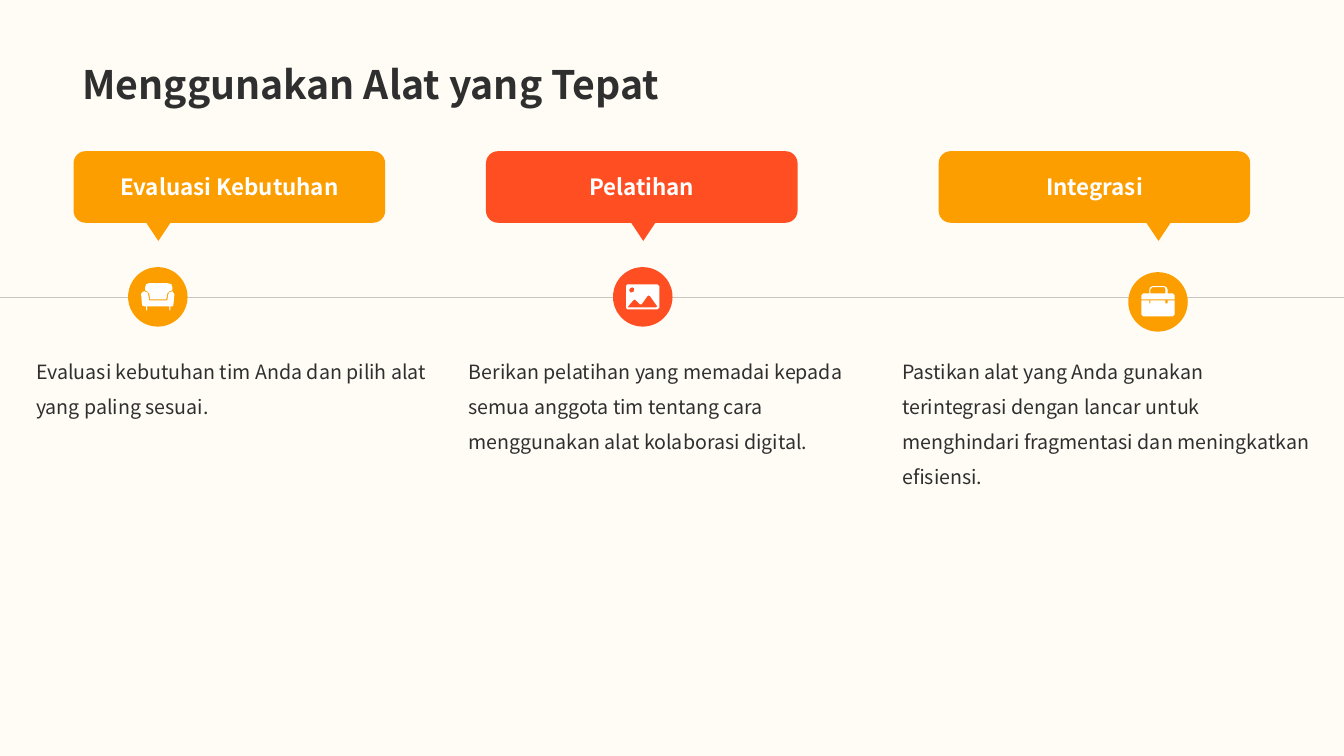
"""Build the slide on choosing the right collaboration tools."""
from lxml import etree
from pptx import Presentation
from pptx.dml.color import RGBColor
from pptx.enum import shapes, text
from pptx.oxml import ns

PX = 9144
THEME = {
    "font": "Noto Sans CJK SC",
    "paper": "FFFCF5", "ink": "2F2F2F", "white": "FFFFFF",
    "amber": "FD9E00", "red": "FF4E22",
    "title": 28, "head": 16, "body": 14,
}
KIND = shapes.MSO_SHAPE

SOFA = [
    [(44, 24), (46, 27), (45, 38), (44, 39), (42, 39), (42, 43), (41, 43), (41, 39),
     (19, 39), (19, 43), (18, 43), (18, 39), (16, 39), (14, 38), (13, 27), (14, 25),
     (16, 24), (19, 25), (20, 27), (21, 33), (39, 33), (40, 27), (41, 25)],
    [(39, 16), (43, 17), (44, 20), (44, 23), (41, 24), (39, 26), (38, 32), (22, 32),
     (21, 26), (19, 24), (17, 23), (17, 20), (18, 17), (21, 16)],
]
PHOTO = [
    [(44, 17), (46, 19), (46, 40), (44, 42), (14, 42), (13, 40), (13, 19), (14, 17)],
    [(37, 29), (35, 28), (34, 29), (29, 36), (28, 37), (27, 37), (23, 33), (22, 32),
     (20, 33), (15, 39), (15, 40), (43, 40), (44, 39)],
    [(19, 20), (21, 21), (21, 24), (19, 25), (17, 25), (16, 23), (17, 21)],
]
BAG = [
    [(21, 28), (21, 31), (22, 31), (22, 28), (37, 28), (37, 31), (39, 31), (39, 28),
     (46, 28), (46, 42), (44, 44), (15, 44), (13, 42), (13, 28)],
    [(36, 14), (38, 15), (39, 17), (39, 21), (44, 21), (46, 23), (46, 27), (13, 27),
     (13, 23), (15, 21), (21, 21), (21, 17), (22, 15), (24, 14)],
    [(36, 15), (24, 15), (22, 17), (22, 21), (37, 21), (37, 17)],
]
STEPS = [
    ("Evaluasi Kebutuhan", "amber", 73, 127, 265, 26, 412, SOFA,
     "Evaluasi kebutuhan tim Anda dan pilih alat yang paling sesuai."),
    ("Pelatihan", "red", 482, 608, 265, 455, 412, PHOTO,
     "Berikan pelatihan yang memadai kepada semua anggota tim tentang cara "
     "menggunakan alat kolaborasi digital."),
    ("Integrasi", "amber", 931, 1119, 270, 885, 426, BAG,
     "Pastikan alat yang Anda gunakan terintegrasi dengan lancar untuk "
     "menghindari fragmentasi dan meningkatkan efisiensi."),
]


def paint(shape, hue):
    shape.shadow.inherit = False
    shape.fill.solid()
    shape.fill.fore_color.rgb = RGBColor.from_string(THEME[hue])
    shape.line.fill.background()


def write(shape, words, size, hue, bold, space):
    frame = shape.text_frame
    frame.text = words
    frame.word_wrap = True
    line = frame.paragraphs[0]
    line.line_spacing = space
    font = line.runs[0].font
    font.name, font.size, font.bold = THEME["font"], THEME[size] * 12700, bold
    font.color.rgb = RGBColor.from_string(THEME[hue])
    return frame


deck = Presentation()
deck.slide_width, deck.slide_height = 1333 * PX, 750 * PX
slide = deck.slides.add_slide(deck.slide_layouts[6])
slide.background.fill.solid()
slide.background.fill.fore_color.rgb = RGBColor.from_string(THEME["paper"])

title = slide.shapes.add_textbox(72 * PX, 0, 1188 * PX, 112 * PX)
frame = write(title, "Menggunakan Alat yang Tepat", "title", "ink", True, 0.9)
frame.vertical_anchor = text.MSO_ANCHOR.BOTTOM

axis = slide.shapes.add_connector(
    shapes.MSO_CONNECTOR.STRAIGHT, 1333 * PX, 295 * PX, 0, 295 * PX)
axis.line.width = 6350
axis.line.color.rgb = RGBColor.from_string(THEME["ink"])
tint = axis.line._ln.find(".//" + ns.qn("a:srgbClr"))
etree.SubElement(tint, ns.qn("a:alpha"), val="40000")
etree.SubElement(axis._element.spPr, ns.qn("a:effectLst"))

for name, hue, left, dot, top, edge, wide, icon, words in STEPS:
    head = slide.shapes.add_shape(
        KIND.ROUNDED_RECTANGLE, left * PX, 150 * PX, 309 * PX, 71 * PX)
    paint(head, hue)
    frame = write(head, name, "head", "white", True, 1.0)
    frame.vertical_anchor = text.MSO_ANCHOR.MIDDLE
    frame.paragraphs[0].alignment = text.PP_ALIGN.CENTER

    tip = slide.shapes.add_shape(
        KIND.ISOSCELES_TRIANGLE, (dot + 18) * PX, 221 * PX, 24 * PX, 18 * PX)
    tip.rotation = 180
    paint(tip, hue)

    badge = slide.shapes.add_group_shape()
    disc = badge.shapes.add_shape(
        KIND.ROUNDED_RECTANGLE, dot * PX, top * PX, 59 * PX, 59 * PX)
    disc.adjustments[0] = 0.5
    paint(disc, hue)
    pen = badge.shapes.build_freeform(*icon[0][0], scale=PX)
    pen.add_line_segments(icon[0][1:])
    for ring in icon[1:]:
        pen.move_to(*ring[0])
        pen.add_line_segments(ring[1:])
    paint(pen.convert_to_shape(dot * PX, top * PX), "white")

    note = slide.shapes.add_textbox(edge * PX, 340 * PX, wide * PX, 112 * PX)
    frame = write(note, words, "body", "ink", False, 1.5)
    frame.auto_size = text.MSO_AUTO_SIZE.SHAPE_TO_FIT_TEXT

deck.save("out.pptx")
